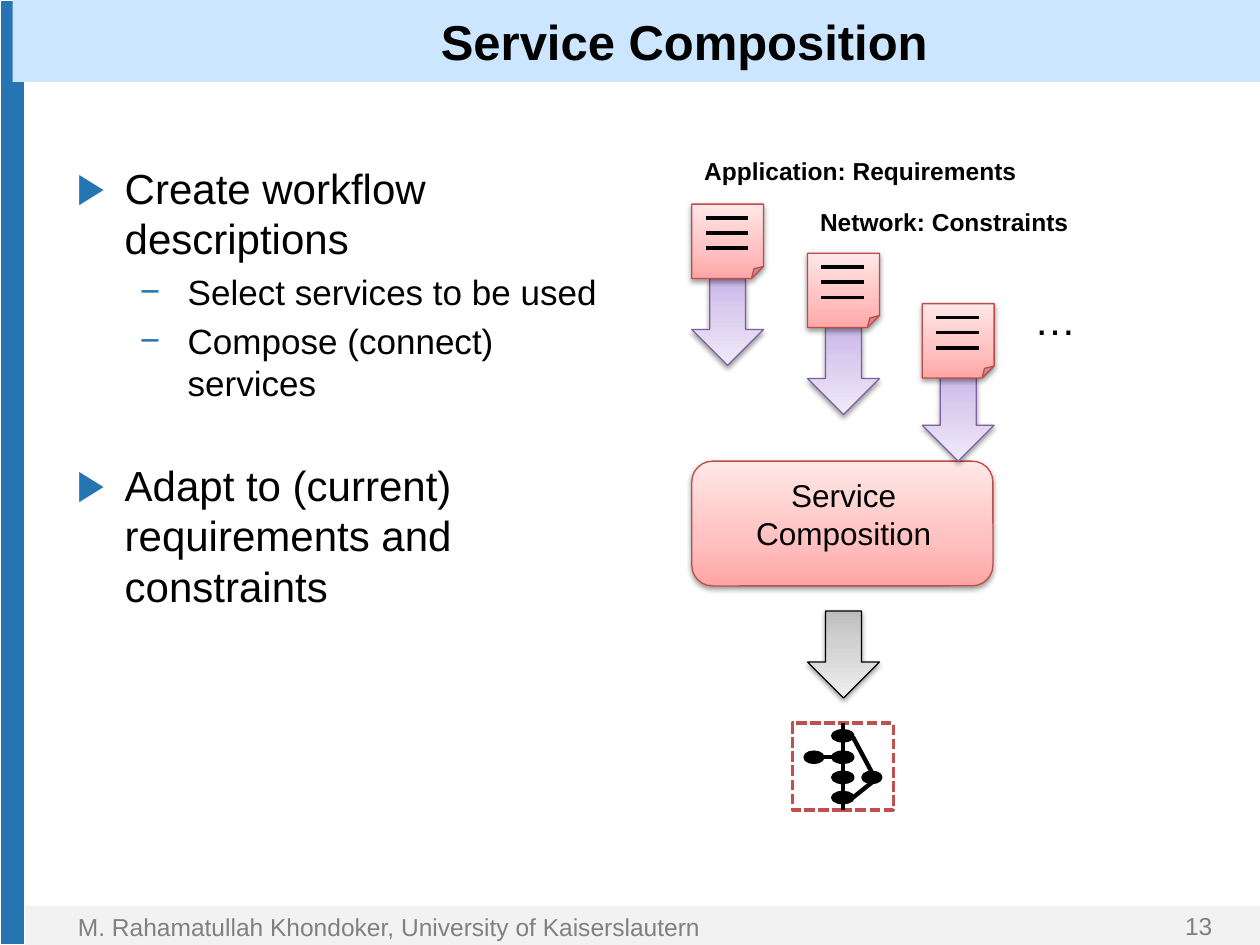
from dataclasses import dataclass
from typing import Optional

from lxml import etree
from pptx import Presentation
from pptx import util as u
from pptx.dml.color import RGBColor
from pptx.enum import dml, shapes, text
from pptx.oxml import parse_xml
from pptx.oxml.ns import nsdecls, qn

COLORS = {
    "black": "000000", "gray": "808080", "blue": "2475B2", "light blue": "CCE6FF",
    "footer": "F2F2F2", "red line": "BF4C48", "dash": "C0504D", "purple line": "7D60A0",
}
GRADIENTS = {
    "gray": ("BDBDBD", "D1D1D1", "EEEEEE"),
    "red": ("FFA6A5", "FFC0BF", "FFE7E7"),
    "purple": ("C9B5E8", "D8CBEE", "F0EAF9"),
}
FONT = "Arial"
Shape = shapes.MSO_SHAPE
Align = text.PP_ALIGN


@dataclass
class Box:
    left: float
    top: float
    width: float
    height: float

    def lengths(self) -> list:
        return [u.Inches(n) for n in (self.left, self.top, self.width, self.height)]


@dataclass
class Label:
    words: str
    box: Box
    size: int
    color: str = "black"
    bold: bool = False
    align: Align = Align.LEFT
    anchor: text.MSO_ANCHOR = text.MSO_ANCHOR.TOP


@dataclass
class Document:
    left: float
    top: float
    arrow_top: float


@dataclass
class Item:
    words: str
    level: int = 0
    space_before: Optional[int] = None


LABELS = [
    Label("13", Box(8.24, 7.19, 1.48, 0.31), 14, "gray", align=Align.RIGHT,
          anchor=text.MSO_ANCHOR.MIDDLE),
    Label("M. Rahamatullah Khondoker, University of Kaiserslautern",
          Box(0.52, 7.19, 5.94, 0.34), 14, "gray"),
    Label("Service\nComposition", Box(5.49, 3.73, 2.41, 0.71), 18, align=Align.CENTER),
    Label("Application: Requirements", Box(5.49, 1.19, 3.99, 0.43), 14, bold=True),
    Label("Network: Constraints", Box(6.41, 1.59, 3.42, 0.43), 14, bold=True),
    Label("…", Box(8.11, 2.28, 1.25, 0.64), 24),
]
DOCUMENTS = [Document(5.49, 1.62, 2.21), Document(6.41, 2.01, 2.6), Document(7.32, 2.41, 2.97)]
ITEMS = [
    Item("Create workflow descriptions", space_before=0),
    Item("Select services to be used", 1),
    Item("Compose (connect) services", 1),
    Item("Adapt to (current)\vrequirements and\vconstraints", space_before=32),
]
NODES = [Box(6.61, top, 0.16, 0.08) for top in (5.8, 5.97, 6.13, 6.29)]
NODES += [Box(6.39, 5.97, 0.14, 0.08), Box(6.85, 6.13, 0.14, 0.08)]
EDGES = [(6.53, 6.01, 6.61, 6.01), (6.77, 6.33, 6.92, 6.21), (6.92, 6.13, 6.77, 5.85)]


def rgb(name: str) -> RGBColor:
    return RGBColor.from_string(COLORS[name])


def set_font(paragraph, size: int, color: str = "black", bold: bool = False) -> None:
    font = paragraph.font
    font.name, font.size, font.bold = FONT, u.Pt(size), bold
    font.color.rgb = rgb(color)


def add_flat(slide, kind: Shape, box: Box, fill: Optional[str], line: Optional[str] = None):
    shape = slide.shapes.add_shape(kind, *box.lengths())
    shape.shadow.inherit = False
    if fill:
        shape.fill.solid()
        shape.fill.fore_color.rgb = rgb(fill)
    else:
        shape.fill.background()
    if line:
        shape.line.color.rgb = rgb(line)
        shape.line.width = u.Pt(2)
    else:
        shape.line.fill.background()
    return shape


def add_shaded(slide, kind: Shape, box: Box, gradient: str, line: str):
    shape = add_flat(slide, kind, box, None, line)
    shape.line.width = u.Pt(0.75)
    stops = "".join(
        f'<a:gs pos="{position}"><a:srgbClr val="{color}"/></a:gs>'
        for position, color in zip((0, 35000, 100000), GRADIENTS[gradient]))
    properties = shape._element.spPr
    properties.replace(properties.find(qn("a:noFill")), parse_xml(
        f'<a:gradFill {nsdecls("a")} rotWithShape="1"><a:gsLst>{stops}</a:gsLst>'
        '<a:lin ang="16200000" scaled="0"/></a:gradFill>'))
    properties.find(qn("a:effectLst")).append(parse_xml(
        f'<a:outerShdw {nsdecls("a")} blurRad="39370" dist="20320" dir="5400000" '
        'rotWithShape="0"><a:srgbClr val="000000"><a:alpha val="38000"/></a:srgbClr>'
        '</a:outerShdw>'))
    return shape


def add_down_arrow(slide, left: float, top: float, gradient: str, line: str) -> None:
    arrow = add_shaded(slide, Shape.UP_ARROW, Box(left, top, 0.57, 0.69), gradient, line)
    arrow._element.spPr.find(qn("a:xfrm")).set("flipV", "1")


def add_line(slide, x1: float, y1: float, x2: float, y2: float, width: float):
    line = slide.shapes.add_connector(
        shapes.MSO_CONNECTOR.STRAIGHT, *[u.Inches(n) for n in (x1, y1, x2, y2)])
    line.line.color.rgb = rgb("black")
    line.line.width = u.Pt(width)
    etree.SubElement(line._element.spPr, qn("a:effectLst"))
    return line


def add_document(slide, document: Document) -> None:
    left, top = document.left, document.top
    add_down_arrow(slide, left, document.arrow_top, "purple", "purple line")
    add_shaded(slide, Shape.FOLDED_CORNER, Box(left, top, 0.57, 0.59), "red", "red line")
    for row in range(3):
        y = top + 0.11 + 0.12 * row
        add_line(slide, left + 0.11, y, left + 0.45, y, 2)


def add_label(slide, label: Label) -> None:
    frame = slide.shapes.add_textbox(*label.box.lengths()).text_frame
    frame.word_wrap = True
    frame.vertical_anchor = label.anchor
    frame.text = label.words
    for paragraph in frame.paragraphs:
        paragraph.alignment = label.align
        set_font(paragraph, label.size, label.color, label.bold)


def add_frame(slide) -> None:
    table = slide.shapes.add_table(1, 1, *Box(0, 0, 0.2, 7.5).lengths()).table
    table.first_row = table.horz_banding = False
    cell = table.cell(0, 0)
    cell.margin_left = cell.margin_right = 0
    cell.fill.solid()
    cell.fill.fore_color.rgb = rgb("blue")
    add_flat(slide, Shape.RECTANGLE, Box(0.1, 0, 9.9, 0.65), "light blue")
    add_flat(slide, Shape.RECTANGLE, Box(0.2, 7.19, 9.8, 0.31), "footer")


def place(slide, placeholder, box: Box) -> None:
    placeholder.left, placeholder.top, placeholder.width, placeholder.height = box.lengths()
    slide.shapes._spTree.append(placeholder._element)


def fill_title(slide) -> None:
    title = slide.shapes.title
    place(slide, title, Box(1.14, 0, 8.58, 0.65))
    frame = title.text_frame
    frame.text = "Service Composition"
    frame.vertical_anchor = text.MSO_ANCHOR.MIDDLE
    frame.margin_left = frame.margin_right = u.Inches(0.04)
    frame.margin_top = frame.margin_bottom = u.Inches(0.04)
    frame.paragraphs[0].alignment = Align.CENTER
    set_font(frame.paragraphs[0], 28, bold=True)


def fill_body(slide) -> None:
    body = slide.placeholders[1]
    place(slide, body, Box(0.51, 1.24, 4.49, 5.66))
    frame = body.text_frame
    frame.text = "\n".join(item.words for item in ITEMS)
    for item, paragraph in zip(ITEMS, frame.paragraphs):
        paragraph.level = item.level
        if item.space_before is not None:
            paragraph.space_before = u.Pt(item.space_before)
        properties = paragraph._p.get_or_add_pPr()
        properties.set("marL", str(u.Inches(0.38 + 0.5 * item.level)))
        properties.set("indent", str(u.Inches(-0.38)))
        color = etree.SubElement(properties, qn("a:buClr"))
        etree.SubElement(color, qn("a:srgbClr"), val=COLORS["blue"])
        etree.SubElement(properties, qn("a:buChar"), char="▶−"[item.level])
        set_font(paragraph, 24 - 4 * item.level)


def add_workflow(slide) -> None:
    border = add_flat(slide, Shape.RECTANGLE, Box(6.29, 5.74, 0.8, 0.69), None, "dash")
    border.line.dash_style = dml.MSO_LINE.SQUARE_DOT
    for node in NODES:
        add_flat(slide, Shape.OVAL, node, "black", "black")
    spine = add_line(slide, 6.69, 5.74, 6.69, 6.43, 2.5)
    spine.begin_connect(border, 0)
    spine.end_connect(border, 2)
    for edge in EDGES:
        add_line(slide, *edge, 2.5)


def main() -> None:
    presentation = Presentation()
    presentation.slide_width, presentation.slide_height = u.Inches(10), u.Inches(7.5)
    slide = presentation.slides.add_slide(presentation.slide_layouts[1])
    add_frame(slide)
    fill_title(slide)
    fill_body(slide)
    add_down_arrow(slide, 6.41, 4.85, "gray", "black")
    add_shaded(slide, Shape.ROUNDED_RECTANGLE, Box(5.49, 3.66, 2.39, 0.99), "red", "red line")
    for document in DOCUMENTS:
        add_document(slide, document)
    for label in LABELS:
        add_label(slide, label)
    add_workflow(slide)
    presentation.save("out.pptx")


if __name__ == "__main__":
    main()
